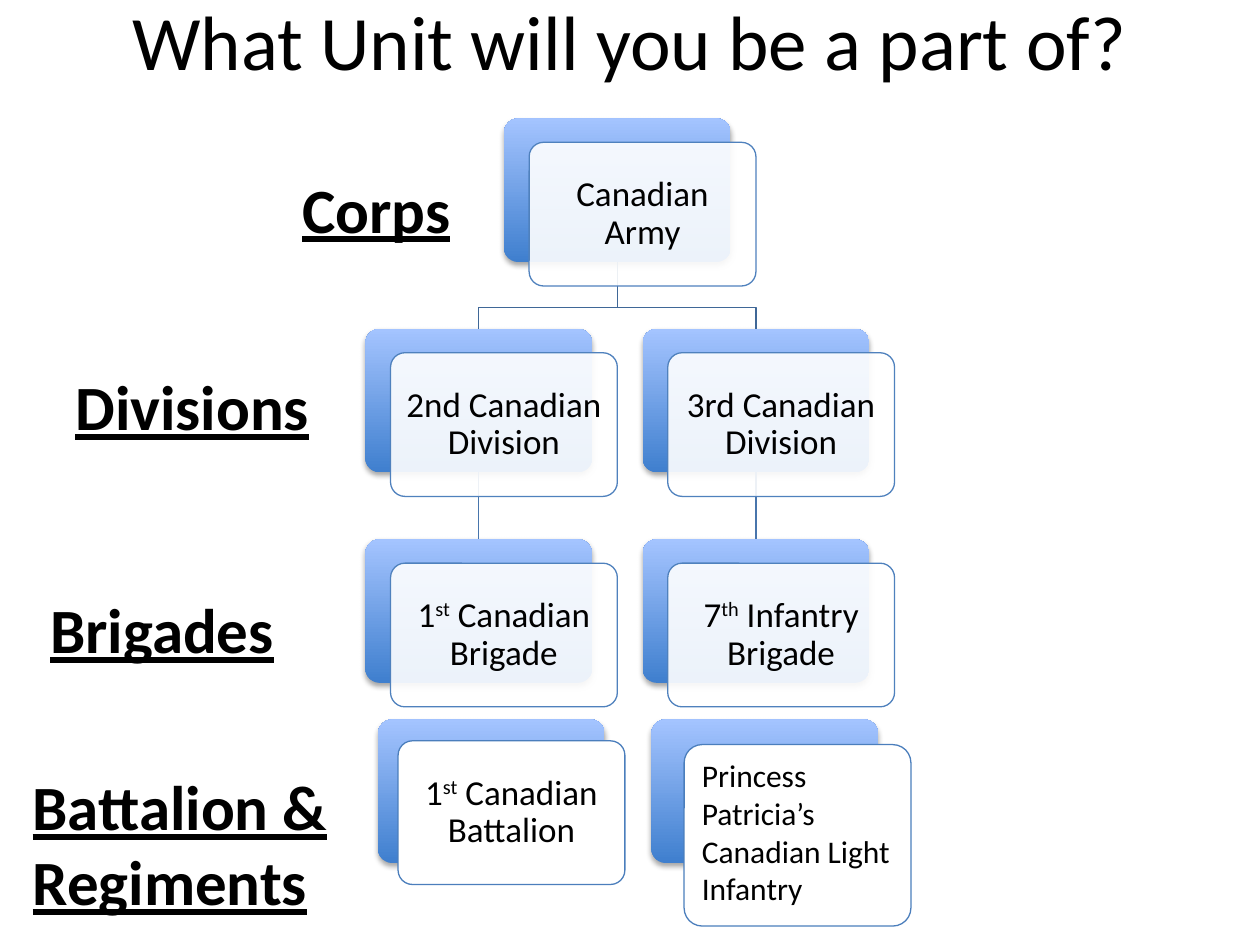
"""Build a slide with an army hierarchy from corps down to battalions."""
from pptx import Presentation
from pptx.dml.color import RGBColor
from pptx.enum.shapes import MSO_CONNECTOR, MSO_SHAPE
from pptx.enum.text import MSO_ANCHOR, MSO_AUTO_SIZE, PP_ALIGN
from pptx.oxml import parse_xml
from pptx.oxml.ns import nsdecls, qn
from pptx.util import Inches, Pt

BOX_W, BOX_H = 1.8, 1.14
LEFT_X, RIGHT_X, ROOT_X = 2.9, 5.1, 4
ROOT_Y, DIVISION_Y, BRIGADE_Y, BATTALION_Y = 0.94, 2.61, 4.28, 5.71
BRANCH_Y = 2.44
CARD_DX, CARD_DY = 0.2, 0.19


def rgb(value):
    return RGBColor.from_string(value)


def apply(target, values):
    for name, value in values.items():
        setattr(target, name, value)


class Deck:
    text = {"name": "Calibri", "size": Pt(20)}
    label_text = {"name": "Calibri", "size": Pt(36), "bold": True, "underline": True}
    title_text = {"name": "Calibri", "size": Pt(44)}

    def __init__(self, prs):
        self.slide = prs.slides.add_slide(prs.slide_layouts[5])
        self.shapes = self.slide.shapes

    def add_text(self, p, text, font):
        for i, part in enumerate(text.split("^")):
            r = p.add_run()
            r.text = part
            apply(r.font, font)
            r.font.color.rgb = rgb("000000")
            if i % 2:
                r._r.get_or_add_rPr().set("baseline", "30000")

    def title(self, text, x, y, w, h):
        sp = self.shapes.title
        apply(sp, {"left": Inches(x), "top": Inches(y), "width": Inches(w), "height": Inches(h)})
        sp.text_frame.vertical_anchor = MSO_ANCHOR.MIDDLE
        p = sp.text_frame.paragraphs[0]
        p.alignment = PP_ALIGN.CENTER
        self.add_text(p, text, self.title_text)

    def label(self, lines, x, y, w, h):
        sp = self.shapes.add_textbox(Inches(x), Inches(y), Inches(w), Inches(h))
        tf = sp.text_frame
        apply(tf, {"word_wrap": False, "auto_size": MSO_AUTO_SIZE.SHAPE_TO_FIT_TEXT})
        for i, line in enumerate(lines):
            p = tf.add_paragraph() if i else tf.paragraphs[0]
            self.add_text(p, line, self.label_text)

    def rounded(self, x, y, h):
        sp = self.shapes.add_shape(
            MSO_SHAPE.ROUNDED_RECTANGLE, Inches(x), Inches(y), Inches(BOX_W), Inches(h))
        sp.adjustments[0] = 0.1
        sp.shadow.inherit = False
        return sp

    def back(self, x, y):
        sp = self.rounded(x, y, BOX_H)
        sp.fill.gradient()
        sp.fill.gradient_angle = 90
        for stop, color in zip(sp.fill.gradient_stops, ("3F7FCE", "A4C4FF")):
            stop.color.rgb = rgb(color)
        sp.line.fill.background()
        sp._element.spPr.find(qn("a:effectLst")).append(parse_xml(
            f'<a:outerShdw {nsdecls("a")} blurRad="{Pt(3.1)}" dist="{Pt(1.8)}" '
            'dir="5400000" rotWithShape="0"><a:srgbClr val="000000">'
            '<a:alpha val="35000"/></a:srgbClr></a:outerShdw>'))
        return sp

    def card(self, text, x, y, h=BOX_H, line="4F81BD", opacity=90, centred=True):
        sp = self.rounded(x, y, h)
        sp.fill.solid()
        sp.fill.fore_color.rgb = rgb("FFFFFF")
        color = sp._element.spPr.find(qn("a:solidFill"))[0]
        color.append(parse_xml(f'<a:alpha {nsdecls("a")} val="{opacity * 1000}"/>'))
        sp.line.color.rgb = rgb(line)
        sp.line.width = Pt(0.75)
        tf = sp.text_frame
        tf.word_wrap = True
        p = tf.paragraphs[0]
        if centred:
            sides = ("left", "top", "right", "bottom")
            apply(tf, {f"margin_{side}": Inches(0.08) for side in sides})
            tf.vertical_anchor = MSO_ANCHOR.MIDDLE
            apply(p, {"alignment": PP_ALIGN.CENTER, "line_spacing": 0.9})
            self.add_text(p, text, self.text)
        else:
            tf.vertical_anchor = MSO_ANCHOR.TOP
            p.alignment = PP_ALIGN.LEFT
            self.add_text(p, text, {**self.text, "size": Pt(18)})

    def link(self, upper, lower):
        cn = self.shapes.add_connector(MSO_CONNECTOR.STRAIGHT, 0, 0, 0, 0)
        cn.begin_connect(upper, 2)
        cn.end_connect(lower, 0)
        cn.line.color.rgb = rgb("4875AC")
        cn.line.width = Pt(0.75)
        cn._element.spPr.append(parse_xml(f'<a:effectLst {nsdecls("a")}/>'))

    def branch(self, upper, lower):
        x1, y1 = upper.left + upper.width // 2, upper.top + upper.height
        x2, y2 = lower.left + lower.width // 2, lower.top
        fb = self.shapes.build_freeform(x1, y1)
        bend = Inches(BRANCH_Y)
        fb.add_line_segments([(x1, bend), (x2, bend), (x2, y2)], close=False)
        sp = fb.convert_to_shape()
        sp.shadow.inherit = False
        sp.fill.background()
        sp.line.color.rgb = rgb("3F6797")
        sp.line.width = Pt(0.75)


prs = Presentation()
prs.slide_width, prs.slide_height = Inches(10), Inches(7.5)
s = Deck(prs)
s.title("What Unit will you be a part of?", 0.5, -0.31, 9, 1.25)

units = [
    ("Canadian Army", ROOT_X, ROOT_Y),
    ("2nd Canadian Division", LEFT_X, DIVISION_Y),
    ("1^st^ Canadian Brigade", LEFT_X, BRIGADE_Y),
    ("3rd Canadian Division", RIGHT_X, DIVISION_Y),
    ("7^th^ Infantry Brigade", RIGHT_X, BRIGADE_Y),
]
army, *columns = [s.back(x, y) for _, x, y in units]
for division, brigade in (columns[:2], columns[2:]):
    s.branch(army, division)
    s.link(division, brigade)
for text, x, y in units:
    s.card(text, x + CARD_DX, y + CARD_DY)

s.back(3, BATTALION_Y)
s.card("1^st^ Canadian Battalion", 3.16, 5.88, line="4B7EBC", opacity=100)
s.back(5.17, BATTALION_Y)
s.card("Princess Patricia’s Canadian Light Infantry", 5.43, 5.91, h=1.44,
       line="4B7EBC", opacity=100, centred=False)

for lines, x, y, w, h in [
    (["Corps"], 2.3, 1.3, 1.39, 0.71),
    (["Divisions"], 0.5, 2.87, 2.08, 0.71),
    (["Brigades"], 0.3, 4.64, 2, 0.71),
    (["Battalion &", "Regiments"], 0.16, 6.04, 2.59, 1.31),
]:
    s.label(lines, x, y, w, h)

prs.save("out.pptx")
